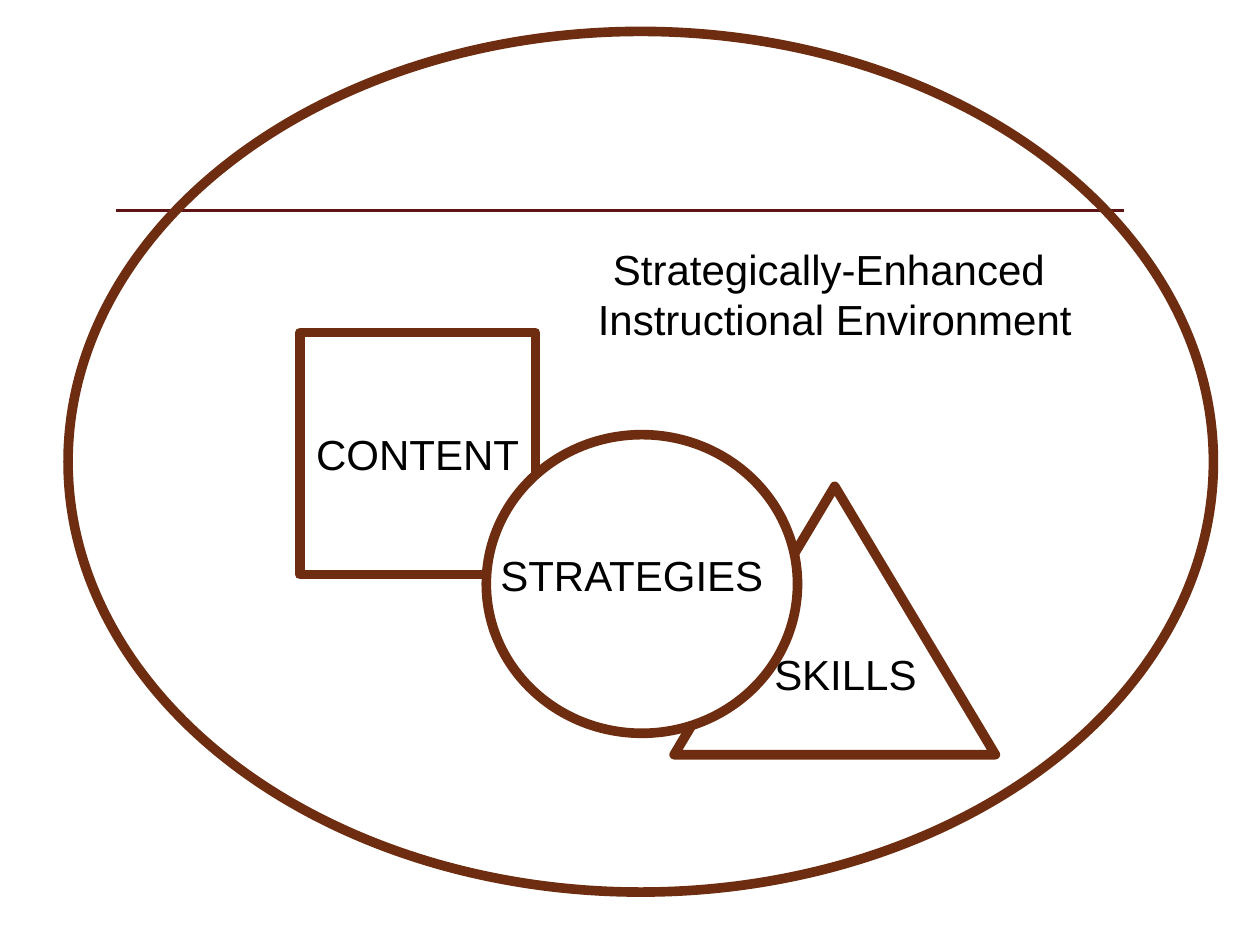
from lxml import etree
from pptx import Presentation
from pptx.dml.color import RGBColor
from pptx.enum.shapes import MSO_CONNECTOR, MSO_SHAPE
from pptx.enum.text import MSO_ANCHOR, PP_ALIGN
from pptx.util import Inches, Pt
from pptx.oxml.ns import qn

RECTANGLE = MSO_SHAPE.RECTANGLE
TRIANGLE = MSO_SHAPE.ISOSCELES_TRIANGLE
OVAL = MSO_SHAPE.OVAL
STRAIGHT = MSO_CONNECTOR.STRAIGHT
MIDDLE = MSO_ANCHOR.MIDDLE
CENTER = PP_ALIGN.CENTER

deck = Presentation()
deck.slide_width, deck.slide_height = Inches(10), Inches(7.5)
column, row = deck.slide_width / 100, deck.slide_height / 100
slide = deck.slides.add_slide(deck.slide_layouts[6])


def color(value):
    return RGBColor.from_string(value)


def write(frame, lines):
    frame.text = "\n".join(lines)
    for paragraph in frame.paragraphs:
        paragraph.alignment = CENTER
        paragraph.font.name = "Arial"
        paragraph.font.size = Pt(24)
        paragraph.font.color.rgb = color("000000")


title_rule = slide.shapes.add_connector(
    STRAIGHT, int(9.2 * column), int(22.27 * row), int(89.2 * column), int(22.27 * row))
title_rule.line.color.rgb = color("601314")
title_rule.line.width = Pt(1.5)
etree.SubElement(title_rule._element.spPr, qn("a:effectLst"))

diagram = [
    (RECTANGLE, 23.8, 35.2, 18.7, 25.6, None, ["CONTENT"]),
    (TRIANGLE, 53.5, 51.47, 25.5, 28.4, None, []),
    (None, 59.7, 68, 14.8, 6.67, None, ["SKILLS"]),
    (OVAL, 38.6, 46, 24.7, 31.6, "FFFFFF", []),
    (None, 37.8, 57.47, 24.7, 6.67, None, ["STRATEGIES"]),
    (OVAL, 5.4, 3.33, 90.9, 91.07, None, []),
    (None, 37.9, 25.07, 56.7, 12.13, None,
     ["Strategically-Enhanced ", "Instructional Environment"]),
]

for outline, left, top, width, height, fill, lines in diagram:
    place = int(left * column), int(top * row), int(width * column), int(height * row)
    if outline is None:
        part = slide.shapes.add_textbox(*place)
        part.text_frame.word_wrap = True
    else:
        part = slide.shapes.add_shape(outline, *place)
        part.shadow.inherit = False
        part.line.color.rgb = color("6E2D10")
        part.line.width = Pt(5.5)
        etree.SubElement(part.line._get_or_add_ln(), qn("a:round"))
        if fill:
            part.fill.solid()
            part.fill.fore_color.rgb = color(fill)
        else:
            part.fill.background()
        part.text_frame.word_wrap = False
        part.text_frame.vertical_anchor = MIDDLE
    if lines:
        write(part.text_frame, lines)

deck.save("out.pptx")
